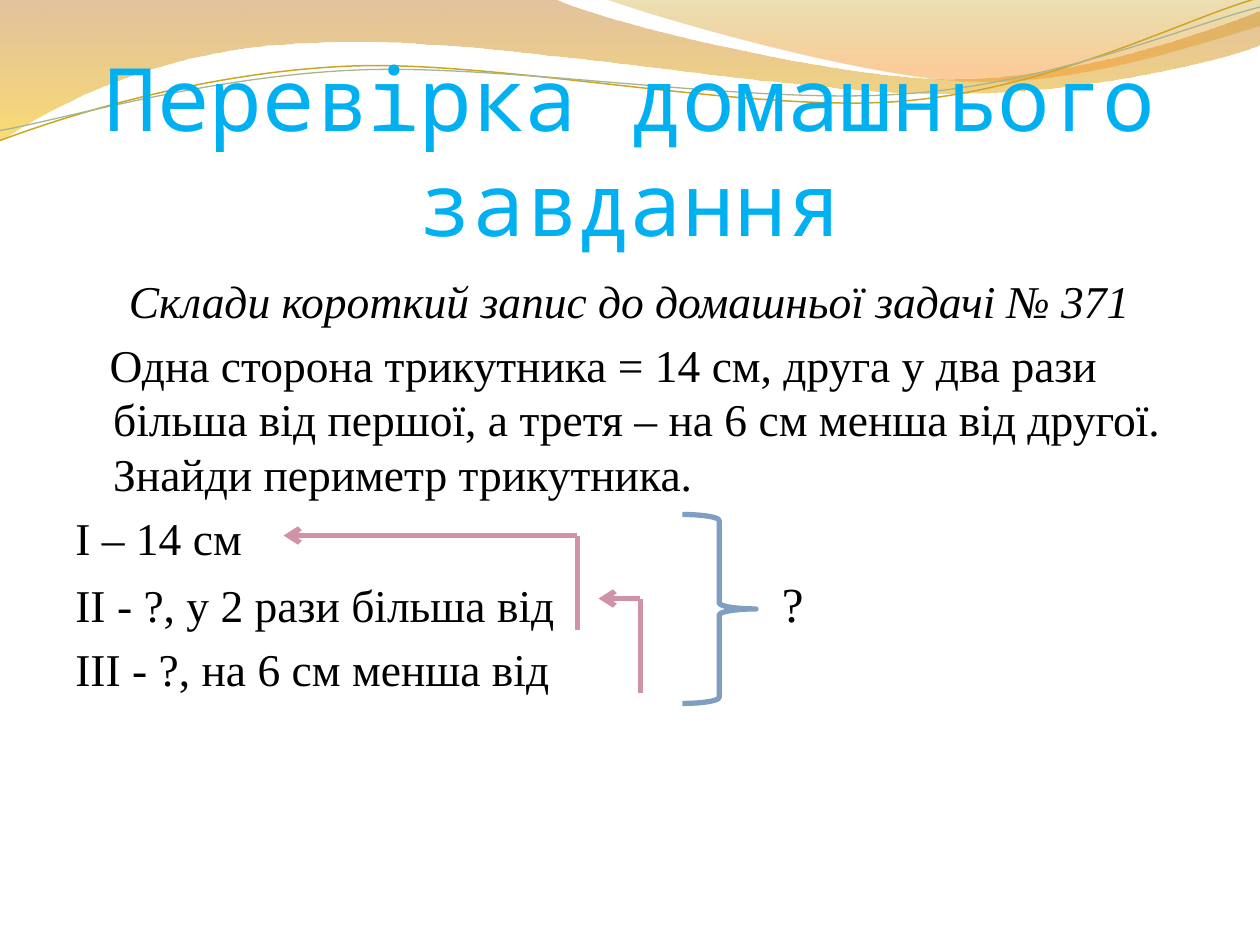
from lxml import etree
from pptx import Presentation
from pptx.dml.color import RGBColor
from pptx.enum import shapes, text
from pptx.oxml import parse_xml
from pptx.oxml.ns import qn
from pptx.util import Pt

NS = 'xmlns:a="http://schemas.openxmlformats.org/drawingml/2006/main"'


def rgb(h):
    return RGBColor.from_string(h)


def add_text(tf, runs, first=False, font="Times New Roman", color="000000", italic=False,
             align=text.PP_ALIGN.LEFT, before=0, margin=0, indent=0):
    p = tf.paragraphs[0] if first else tf.add_paragraph()
    pPr = p._p.get_or_add_pPr()
    pPr.set("marL", str(Pt(margin)))
    pPr.set("indent", str(Pt(indent)))
    p.alignment = align
    p.space_before = Pt(before)
    for words, size, tracking in runs:
        r = p.add_run()
        r.text = words
        r.font.name, r.font.size, r.font.italic = font, Pt(size), italic
        r.font.color.rgb = rgb(color)
        if tracking:
            r.font._element.set("spc", str(tracking * 100))


prs = Presentation()
prs.slide_width, prs.slide_height = Pt(720), Pt(540)
s = prs.slides.add_slide(prs.slide_layouts[6])

# Waves: a 2-number step is a straight line, a 6-number step a Bezier curve (points)
waves = [
    dict(steps=[(0, 0), (316.8, -0.7), (342.7, 12.2, 478, 45.4, 545.8, 45.4),
                (614.2, 45.4, 689.8, 18.7, 720, 6.5), (720.7, 25.9),
                (707.8, 31.7, 626.4, 54.7, 537.1, 54),
                (447.8, 54, 275, 20.2, 185, 24.5), (92.9, 25.9, 33.1, 59.8, -0.7, 81.4)],
         stops=[(0, "C07A28", 45), (100, "F7BF00", 55)]),
    dict(steps=[(344.9, -0.7), (366.5, 7.9, 491, 44.6, 553.7, 46.8),
                (616.3, 49.7, 691.9, 23, 720, 15.1), (720, 0)],
         stops=[(0, "C09709", 30), (80, "F59320", 45)]),
    dict(steps=[(0, 79.9), (34.6, 67, 113.8, 41, 199.4, 37.4),
                (284.4, 33.8, 427, 64.1, 513.4, 57.6), (599.8, 51.1, 675.4, 10.8, 718.6, -1.4)],
         line=("CCA624", 0.85)),
    dict(steps=[(0, 74.9), (33.8, 69.1, 118.1, 43.9, 203.8, 40.3),
                (290.2, 36.7, 429.8, 60.5, 516.2, 54), (601.9, 48.2, 677.5, 15.1, 720, 4.3)],
         line=("A5B592", 0.75)),
]
for wave in waves:
    steps = wave["steps"]
    fb = s.shapes.build_freeform(*steps[0], scale=Pt(1))
    fb.add_line_segments([step[-2:] for step in steps[1:]], close="stops" in wave)
    sp = fb.convert_to_shape()
    sp.shadow.inherit = False
    # Turn the long steps into curves, in the coordinates of the shape
    path = sp._element.spPr.find(".//" + qn("a:path"))
    left, top = (min(step[a] for step in [st[-2:] for st in steps]) for a in (0, 1))
    path.set("w", str(sp.width))
    path.set("h", str(sp.height))
    for seg, step in zip(list(path), steps):
        if len(step) == 6:
            seg.tag = qn("a:cubicBezTo")
        for old in list(seg):
            seg.remove(old)
        for x, y in zip(step[::2], step[1::2]):
            etree.SubElement(seg, qn("a:pt"), x=str(Pt(x - left)), y=str(Pt(y - top)))
    if "stops" in wave:
        sp.line.fill.background()
        gs = "".join(f'<a:gs pos="{pos * 1000}"><a:srgbClr val="{c}">'
                     f'<a:alpha val="{alpha * 1000}"/></a:srgbClr></a:gs>'
                     for pos, c, alpha in wave["stops"])
        sp._element.spPr.find(qn("a:custGeom")).addnext(parse_xml(
            f'<a:gradFill {NS} rotWithShape="1"><a:gsLst>{gs}</a:gsLst>'
            '<a:lin ang="5400000" scaled="0"/></a:gradFill>'))
    else:
        sp.fill.background()
        sp.line.color.rgb, sp.line.width = rgb(wave["line"][0]), Pt(wave["line"][1])

# Title
tf = s.shapes.add_textbox(Pt(36), Pt(55.4), Pt(648), Pt(90)).text_frame
tf.word_wrap = True
tf.vertical_anchor = text.MSO_ANCHOR.BOTTOM
tf.margin_left = tf.margin_right = tf.margin_bottom = 0
add_text(tf, [("Перевірка домашнього завдання", 50, 0)], first=True,
         font="Noto Sans Mono", color="00B0F0", align=text.PP_ALIGN.CENTER)

# Problem and its short record; a widened space carries the last "?" past the brace
tf = s.shapes.add_textbox(Pt(36), Pt(152.6), Pt(648), Pt(345.6)).text_frame
tf.word_wrap = True
body = dict(before=5.2, margin=21.6, indent=-21.6)
add_text(tf, [("Склади короткий запис до домашньої задачі № 371", 26, 0)], first=True,
         italic=True, align=text.PP_ALIGN.CENTER, **(body | dict(before=0)))
add_text(tf, [("Одна сторона трикутника = 14 см, друга у два рази більша від першої, "
               "а третя – на 6 см менша від другої. Знайди периметр трикутника.", 26, 0)],
         **(body | dict(indent=-2)))
add_text(tf, [("І – 14 см", 26, 0)], **body)
add_text(tf, [("ІІ - ?, у 2 рази більша від", 26, 0), (" ", 26, 123), ("?", 28, 0)], **body)
add_text(tf, [("ІІІ - ?, на 6 см менша від", 26, 0)], **body)

# Arrows from each side back to the one it depends on
for x, y, tip in ((330, 306, 162), (366, 342, 342)):
    for x1, y1, x2, y2 in ((x, y + 54, x, y), (x, y, tip, y)):
        sp = s.shapes.add_connector(shapes.MSO_CONNECTOR.STRAIGHT, Pt(x1), Pt(y1), Pt(x2), Pt(y2))
        sp.line.width = Pt(3)
        sp.line.color.rgb = rgb("D092A7")
        etree.SubElement(sp._element.spPr, qn("a:effectLst"))
        if y1 == y2:
            etree.SubElement(sp.line._get_or_add_ln(), qn("a:tailEnd"), type="arrow")

# Brace joining the three sides
sp = s.shapes.add_shape(shapes.MSO_SHAPE.RIGHT_BRACE, Pt(390), Pt(294), Pt(42), Pt(108))
sp.fill.background()
sp.shadow.inherit = False
sp.line.width = Pt(3)
sp.line.color.rgb = rgb("809EC2")

prs.save("out.pptx")
